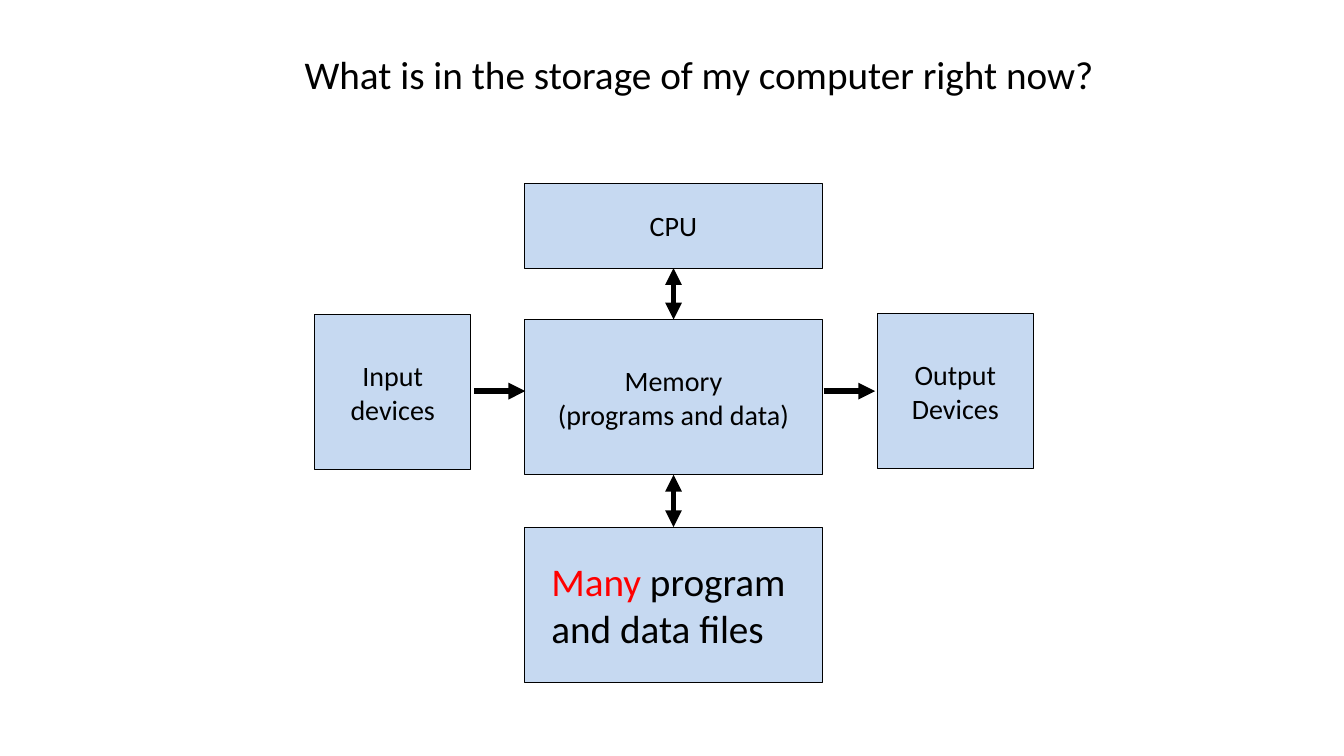
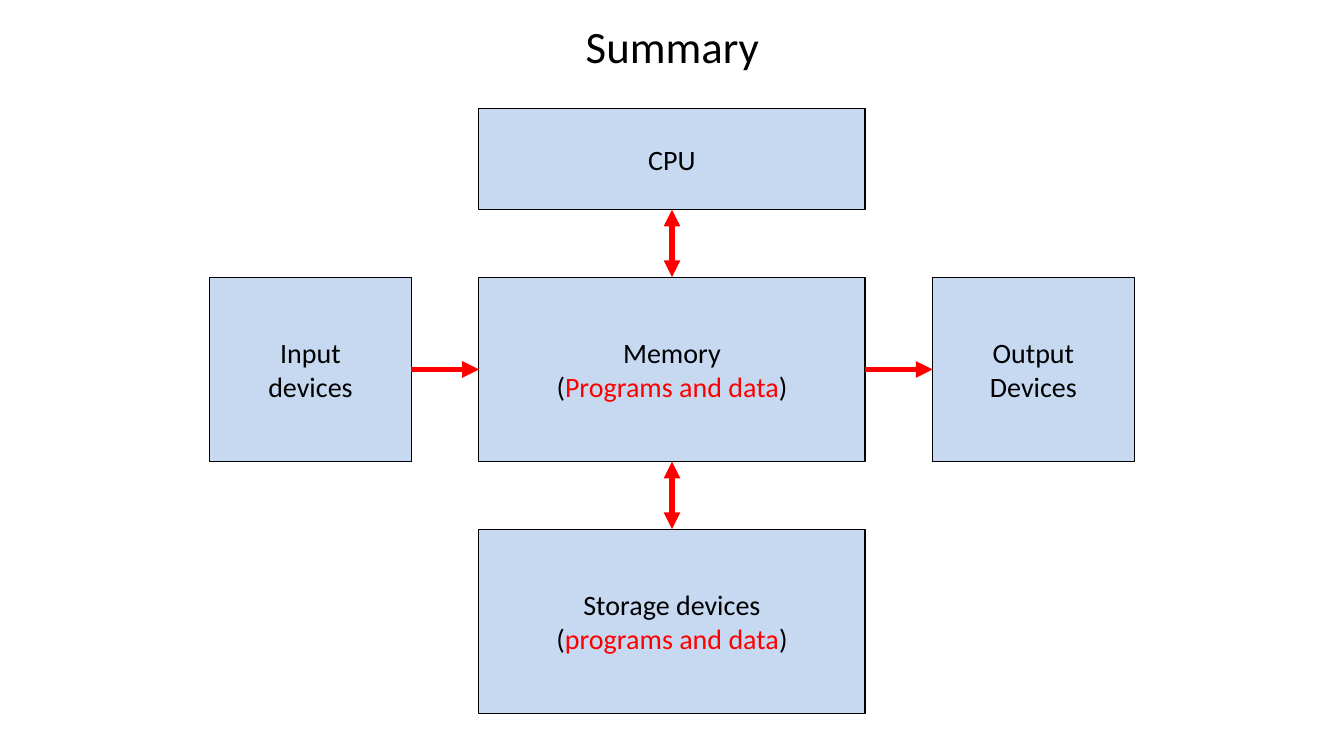
from lxml import etree
from pptx import Presentation
from pptx.dml.color import RGBColor
from pptx.enum.shapes import MSO_CONNECTOR, MSO_SHAPE
from pptx.enum.text import MSO_ANCHOR, PP_ALIGN
from pptx.oxml.ns import qn
from pptx.util import Inches, Pt

RECTANGLE, STRAIGHT = MSO_SHAPE.RECTANGLE, MSO_CONNECTOR.STRAIGHT
MIDDLE, LEFT, CENTER = MSO_ANCHOR.MIDDLE, PP_ALIGN.LEFT, PP_ALIGN.CENTER
TOP_SIDE, LEFT_SIDE, BOTTOM_SIDE, RIGHT_SIDE = range(4)

FONT = "Calibri"
BLACK, RED, PALE_BLUE = "000000", "FF0000", "C6D9F1"

INPUT_LINES = [["Input"], ["devices"]]
OUTPUT_LINES = [["Output"], ["Devices"]]


def color(hex_code):
    return RGBColor.from_string(hex_code)


def write_lines(frame, lines, size, align):
    """Each line is a list of spans: plain text, or (text, colour)."""
    for index, line in enumerate(lines):
        para = frame.paragraphs[0] if index == 0 else frame.add_paragraph()
        para.alignment = align
        para.font.size = Pt(size)
        para.font.name = FONT
        para.font.color.rgb = color(BLACK)
        for part in line:
            text, hex_code = part if isinstance(part, tuple) else (part, BLACK)
            span = para.add_run()
            span.text = text
            span.font.color.rgb = color(hex_code)


def add_titled_slide(deck, text, area, size, align):
    slide = deck.slides.add_slide(deck.slide_layouts[5])
    title = slide.shapes.title
    title.left, title.top, title.width, title.height = map(Inches, area)
    title.text_frame.vertical_anchor = MIDDLE
    write_lines(title.text_frame, [[text]], size, align)
    return slide


def add_box(slide, area, lines):
    box = slide.shapes.add_shape(RECTANGLE, *map(Inches, area))
    box.shadow.inherit = False
    box.fill.solid()
    box.fill.fore_color.rgb = color(PALE_BLUE)
    box.line.color.rgb = color(BLACK)
    box.line.width = Pt(0.75)
    box.text_frame.word_wrap = False
    box.text_frame.vertical_anchor = MIDDLE
    write_lines(box.text_frame, lines, 20, CENTER)
    return box


def add_arrow(slide, start, end, hex_code, double=False):
    """An end is either (box, side) or a point in inches."""
    arrow = slide.shapes.add_connector(STRAIGHT, 0, 0, 0, 0)
    if isinstance(start[0], float):
        arrow.begin_x, arrow.begin_y = map(Inches, start)
    else:
        arrow.begin_connect(*start)
    if isinstance(end[0], float):
        arrow.end_x, arrow.end_y = map(Inches, end)
    else:
        arrow.end_connect(*end)
    arrow.line.color.rgb = color(hex_code)
    arrow.line.width = Pt(4)
    line = arrow.line._get_or_add_ln()
    for tag in ("a:headEnd", "a:tailEnd") if double else ("a:tailEnd",):
        etree.SubElement(line, qn(tag)).set("type", "triangle")
    etree.SubElement(arrow._element.spPr, qn("a:effectLst"))


def add_diagram(slide, areas, memory_lines, storage_lines, hex_code, flows=None):
    """Draw the five boxes; flows overrides the ends of the side arrows."""
    memory = add_box(slide, areas["memory"], memory_lines)
    cpu = add_box(slide, areas["cpu"], [["CPU"]])
    storage = add_box(slide, areas["storage"], storage_lines)
    inputs = add_box(slide, areas["input"], INPUT_LINES)
    outputs = add_box(slide, areas["output"], OUTPUT_LINES)

    # Two-way traffic above and below the memory
    for upper, lower in ((cpu, memory), (memory, storage)):
        add_arrow(slide, (upper, BOTTOM_SIDE), (lower, TOP_SIDE), hex_code, True)

    # One-way traffic from left to right
    flows = flows or [((source, RIGHT_SIDE), (target, LEFT_SIDE))
                      for source, target in ((inputs, memory), (memory, outputs))]
    for start, end in flows:
        add_arrow(slide, start, end, hex_code)


def add_label(slide, area, lines):
    label = slide.shapes.add_textbox(*map(Inches, area))
    label.text_frame.word_wrap = True
    write_lines(label.text_frame, lines, 28, LEFT)


def build_storage_slide(deck):
    slide = add_titled_slide(
        deck, "What is in the storage of my computer right now?",
        (2.92, 0.21, 9.21, 1.05), 28, LEFT)
    left, width, height, side = 5.2, 2.96, 1.54, 1.55
    areas = {
        "cpu": (left, 1.82, width, 0.84),
        "memory": (left, 3.17, width, height),
        "storage": (left, 5.23, width, height),
        "input": (3.12, 3.12, side, height),
        "output": (8.7, 3.11, side, height),
    }
    flow_y = 3.88
    flows = [((x, flow_y), (x + 0.51, flow_y)) for x in (4.7, 8.17)]
    add_diagram(slide, areas, [["Memory"], ["(programs and data)"]], [],
                BLACK, flows)
    add_label(slide, (left + 0.17, 5.48, 2.63, 1.04),
              [[("Many", RED), " program and data files"]])


def build_summary_slide(deck):
    slide = add_titled_slide(deck, "Summary", (1.67, -0.17, 10, 1.25), 32, CENTER)
    left, width, height, side, gap = 4.75, 3.83, 1.83, 2, 0.67
    cpu_top, cpu_height = 1.08, 1
    memory_top = cpu_top + cpu_height + gap
    areas = {
        "cpu": (left, cpu_top, width, cpu_height),
        "memory": (left, memory_top, width, height),
        "storage": (left, memory_top + height + gap, width, height),
        "input": (left - gap - side, memory_top, side, height),
        "output": (left + width + gap, memory_top, side, height),
    }
    add_diagram(
        slide, areas,
        [["Memory"], ["(", ("Programs and data", RED), ")"]],
        [["Storage devices"], ["(", ("programs and data", RED), ")"]], RED)


def main():
    deck = Presentation()
    deck.slide_width, deck.slide_height = Inches(13.33), Inches(7.5)
    build_storage_slide(deck)
    build_summary_slide(deck)
    deck.save("out.pptx")


if __name__ == "__main__":
    main()
